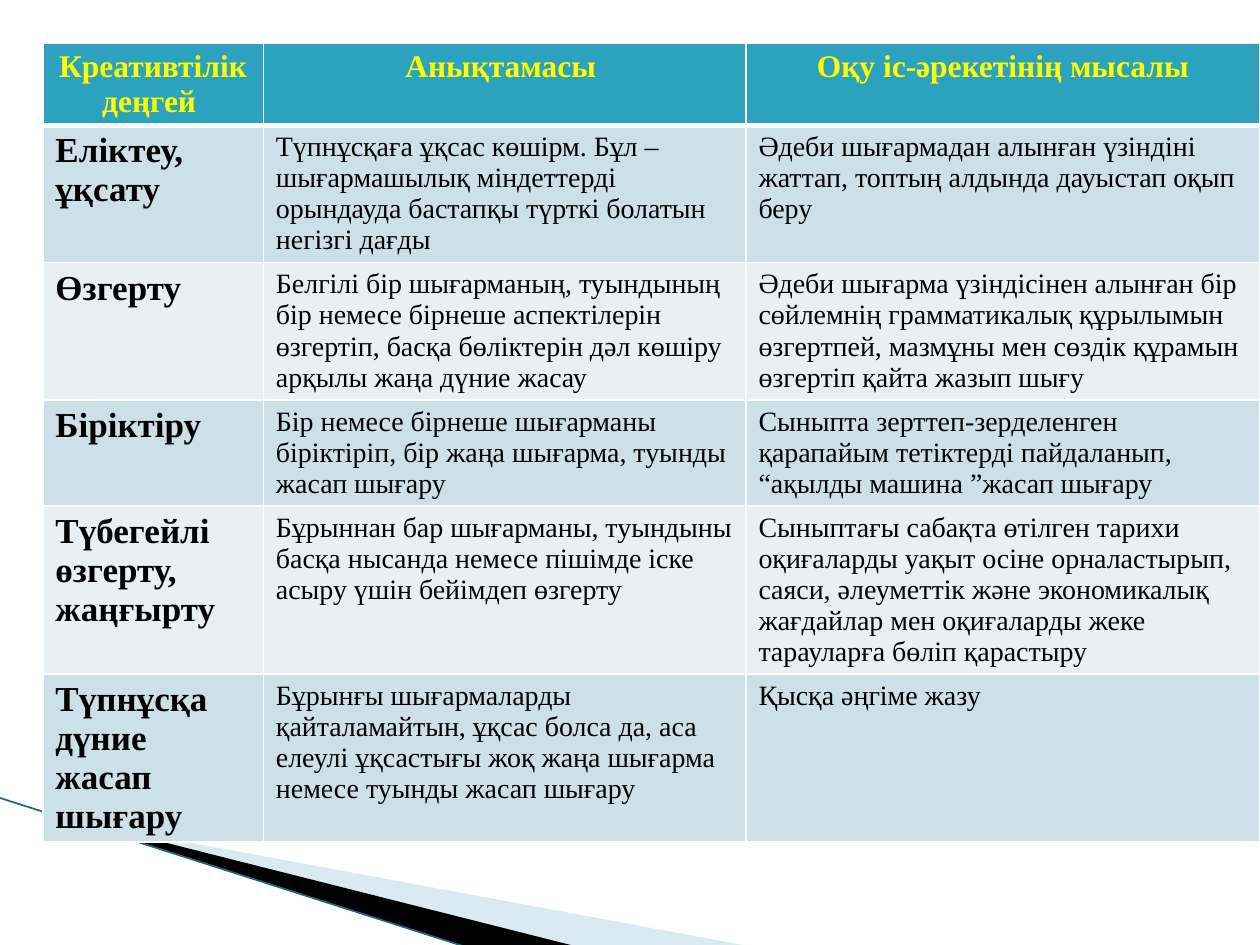
from lxml import etree
from pptx import Presentation
from pptx.dml.color import RGBColor
from pptx.enum.shapes import MSO_CONNECTOR
from pptx.enum.text import PP_ALIGN
from pptx.oxml.ns import qn
from pptx.util import Inches, Pt

STRAIGHT = MSO_CONNECTOR.STRAIGHT
CENTER, LEFT = PP_ALIGN.CENTER, PP_ALIGN.LEFT
BLANK_LAYOUT = 6
GRID_COLUMNS, GRID_ROWS = 10, 7.5

COLUMN_WIDTHS = [1.75, 3.83, 4.08]
ROW_HEIGHTS = [0.64, 1.09, 1.09, 0.84, 1.33, 1.33]
ROWS = [
    ("Креативтілік деңгей ", "Анықтамасы ", "Оқу іс-әрекетінің мысалы"),
    ("Еліктеу, ұқсату",
     "Түпнұсқаға ұқсас көшірм. Бұл – шығармашылық міндеттерді орындауда "
     "бастапқы түрткі болатын негізгі дағды",
     "Әдеби шығармадан алынған үзіндіні жаттап, топтың алдында дауыстап оқып беру"),
    ("Өзгерту",
     "Белгілі бір шығарманың, туындының бір немесе бірнеше аспектілерін өзгертіп, "
     "басқа бөліктерін дәл көшіру арқылы жаңа дүние жасау",
     "Әдеби шығарма үзіндісінен алынған бір сөйлемнің грамматикалық құрылымын "
     "өзгертпей, мазмұны мен сөздік құрамын өзгертіп қайта жазып шығу"),
    ("Біріктіру",
     "Бір немесе бірнеше шығарманы біріктіріп, бір жаңа шығарма, туынды жасап шығару",
     "Сыныпта зерттеп-зерделенген қарапайым тетіктерді пайдаланып, "
     "“ақылды машина ”жасап шығару"),
    ("Түбегейлі өзгерту, жаңғырту",
     "Бұрыннан бар шығарманы, туындыны басқа нысанда немесе пішімде іске асыру "
     "үшін бейімдеп өзгерту",
     "Сыныптағы сабақта өтілген тарихи оқиғаларды уақыт осіне орналастырып, саяси, "
     "әлеуметтік және экономикалық жағдайлар мен оқиғаларды жеке тарауларға бөліп "
     "қарастыру"),
    ("Түпнұсқа дүние жасап шығару",
     "Бұрынғы шығармаларды қайталамайтын, ұқсас болса да, аса елеулі ұқсастығы жоқ "
     "жаңа шығарма немесе туынды жасап шығару",
     "Қысқа әңгіме жазу"),
]


def color(hex_text):
    return RGBColor.from_string(hex_text)


class SlideBuilder:
    """Draws on one slide; lengths are columns and rows of a 10 by 7.5 grid."""

    font_name = "Times New Roman"
    header_fill, band_fills = "2DA2BF", ("CDE0E8", "E8F0F4")
    border_color = "FFFFFF"
    header_format = {"size": Pt(18), "bold": True}
    label_format = {"size": Pt(20), "bold": True}
    body_format = {"size": Pt(16), "bold": False}

    def __init__(self, deck):
        self.slide = deck.slides.add_slide(deck.slide_layouts[BLANK_LAYOUT])
        self.column = deck.slide_width / GRID_COLUMNS
        self.row = deck.slide_height / GRID_ROWS

    def point(self, column, row):
        return round(column * self.column), round(row * self.row)

    def wedge(self, frame, points, fill, opacity=100):
        """Fill an outline that may reach beyond its frame."""
        start, *rest = [self.point(*place) for place in points]
        builder = self.slide.shapes.build_freeform(*start)
        builder.add_line_segments(rest, close=True)
        shape = builder.convert_to_shape()
        self.reframe(shape, frame)
        shape.shadow.inherit = False
        shape.line.fill.background()
        shape.fill.solid()
        shape.fill.fore_color.rgb = color(fill)
        if opacity < 100:
            tint = shape.fill._xPr.find(".//" + qn("a:srgbClr"))
            etree.SubElement(tint, qn("a:alpha"), val=str(opacity * 1000))

    def reframe(self, shape, frame):
        """Change the frame while every point of the outline stays in place."""
        left, top = self.point(*frame[:2])
        width, height = self.point(*frame[2:])
        outline = shape._element.spPr.find(".//" + qn("a:path"))
        for spot in outline.iter(qn("a:pt")):
            spot.set("x", str(int(spot.get("x")) + shape.left - left))
            spot.set("y", str(int(spot.get("y")) + shape.top - top))
        outline.set("w", str(width))
        outline.set("h", str(height))
        shape.left, shape.top, shape.width, shape.height = left, top, width, height

    def line(self, start, end, stroke, width):
        connector = self.slide.shapes.add_connector(
            STRAIGHT, *self.point(*start), *self.point(*end))
        connector.line.color.rgb = color(stroke)
        connector.line.width = Pt(width)
        etree.SubElement(connector._element.spPr, qn("a:effectLst"))

    def table(self, left, top, widths, heights, rows):
        frame = self.slide.shapes.add_table(
            len(rows), len(widths), *self.point(left, top),
            *self.point(sum(widths), sum(heights)))
        table = frame.table
        for column, width in zip(table.columns, widths):
            column.width = round(width * self.column)
        for row, height in zip(table.rows, heights):
            row.height = round(height * self.row)
        for row_index, texts in enumerate(rows):
            for column_index, text in enumerate(texts):
                self.cell(table.cell(row_index, column_index), text,
                          row_index, column_index)

    def cell(self, cell, text, row_index, column_index):
        if row_index == 0:
            fill, ink, values = self.header_fill, "FFFF00", self.header_format
        else:
            fill, ink = self.band_fills[(row_index - 1) % 2], "000000"
            values = self.body_format if column_index else self.label_format
        cell.fill.solid()
        cell.fill.fore_color.rgb = color(fill)
        self.borders(cell, top=3 if row_index == 1 else 1,
                     bottom=3 if row_index == 0 else 1)
        para = cell.text_frame.paragraphs[0]
        para.alignment = LEFT if row_index else CENTER
        span = para.add_run()
        span.text = text
        span.font.name = self.font_name
        span.font.color.rgb = color(ink)
        for name, value in values.items():
            setattr(span.font, name, value)

    def borders(self, cell, top, bottom):
        properties = cell._tc.get_or_add_tcPr()
        sides = {"lnL": 1, "lnR": 1, "lnT": top, "lnB": bottom}
        for index, (side, width) in enumerate(sides.items()):
            edge = etree.Element(qn("a:" + side), w=str(Pt(width)))
            fill = etree.SubElement(edge, qn("a:solidFill"))
            etree.SubElement(fill, qn("a:srgbClr"), val=self.border_color)
            properties.insert(index, edge)


def main():
    deck = Presentation()
    deck.slide_width, deck.slide_height = Inches(10), Inches(7.5)
    page = SlideBuilder(deck)
    page.wedge((0.78, 5.47, 4.16, 1.58),
               [(0.55, 6.51), (5.95, 7.51), (4.56, 7.51), (0.55, 6.5)],
               "A0CBDC", opacity=40)
    page.wedge((-0.06, 6.33, 4.16, 0.92),
               [(0.53, 6.49), (4.57, 7.51), (3.72, 7.52), (0.54, 6.5)], "000000")
    page.line((-0.01, 6.33), (3.71, 7.52), "1B6B80", 0.95)
    page.table(0.34, 0.34, COLUMN_WIDTHS, ROW_HEIGHTS, ROWS)
    deck.save("out.pptx")


if __name__ == "__main__":
    main()
